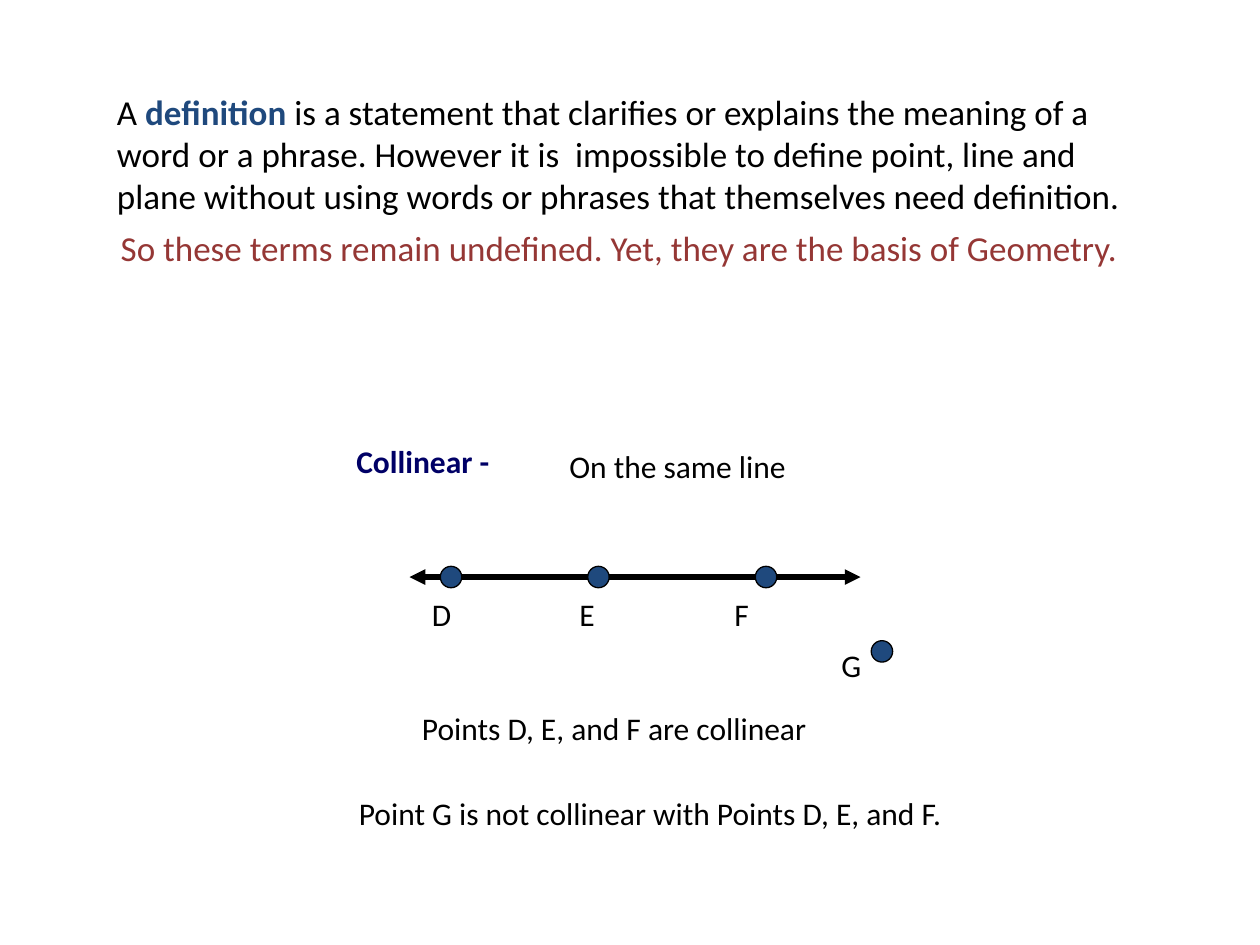
from lxml.etree import SubElement
from pptx import Presentation
from pptx.dml.color import RGBColor
from pptx.enum.shapes import MSO_CONNECTOR as CONN, MSO_SHAPE as SHAPE
from pptx.enum.text import PP_ALIGN as ALIGN
from pptx.oxml.ns import qn
from pptx.util import Inches, Pt

BLACK, BLUE, NAVY, RED = "000000", "1F497D", "000066", "953735"
FONT = "Calibri"

# (left, top, width, height), size, alignment, runs of (text, colour, bold)
TEXTS = [
    ((0.83, 0.67, 8.48, 1.11), 20, ALIGN.LEFT, [
        ("A ", BLACK, False),
        ("definition ", BLUE, True),
        ("is a statement that clarifies or explains the meaning of a word or "
         "a phrase. However it is  impossible to define point, line and plane "
         "without using words or phrases that themselves need definition.",
         BLACK, False)]),
    ((0.75, 1.75, 8.33, 0.77), 20, ALIGN.CENTER, [
        ("So these terms remain undefined. Yet, they are the basis of Geometry.",
         RED, False)]),
    ((2.73, 3.46, 1.3, 0.4), 18, ALIGN.LEFT, [("Collinear -", NAVY, True)]),
    ((4.42, 3.5, 2.72, 0.5), 18, ALIGN.LEFT, [("On the same line", BLACK, False)]),
    ((3.25, 5.58, 3.35, 0.4), 18, ALIGN.LEFT,
     [("Points D, E, and F are collinear", BLACK, False)]),
    ((6.58, 5.08, 0.4, 0.42), 18, ALIGN.LEFT, [("G", BLACK, False)]),
    ((2.75, 6.25, 5, 0.4), 18, ALIGN.LEFT,
     [("Point G is not collinear with Points D, E, and F.", BLACK, False)]),
]
LINE_LABELS = ((3.33, 4.67, 3.05, 0.5), 18, ALIGN.LEFT, [("D\tE\tF", BLACK, False)])
LABEL_TABS = [1.17, 2.4]

LINE_LEFT, LINE_RIGHT, LINE_Y = 3.25, 6.83, 4.58
DOT = 0.17
POINTS = [(3.58, LINE_Y), (4.75, LINE_Y), (6.08, LINE_Y), (7, 5.17)]  # D, E, F, G


def rgb(value):
    return RGBColor.from_string(value)


def add_text(slide, box, size, align, runs):
    tf = slide.shapes.add_textbox(*map(Inches, box)).text_frame
    tf.word_wrap = True
    p = tf.paragraphs[0]
    p.alignment = align
    for text, color, bold in runs:
        r = p.add_run()
        r.text = text
        for name, value in {"name": FONT, "size": Pt(size), "bold": bold}.items():
            setattr(r.font, name, value)
        r.font.color.rgb = rgb(color)
    return p


def add_tab_stops(p, stops):
    tabs = SubElement(p._p.get_or_add_pPr(), qn("a:tabLst"))
    for stop in stops:
        SubElement(tabs, qn("a:tab"), pos=str(Inches(stop)), algn="l")


def add_double_arrow(slide, left, right, y):
    line = slide.shapes.add_connector(
        CONN.STRAIGHT, Inches(left), Inches(y), Inches(right), Inches(y))
    line.line.color.rgb = rgb(BLACK)
    line.line.width = Pt(3)
    ln = line.line._get_or_add_ln()
    for end in ("a:headEnd", "a:tailEnd"):
        SubElement(ln, qn(end), type="triangle")
    SubElement(line._element.spPr, qn("a:effectLst"))


def add_dot(slide, x, y):
    """Draw a point centred on x, y."""
    sp = slide.shapes.add_shape(
        SHAPE.OVAL, Inches(x - DOT / 2), Inches(y - DOT / 2), Inches(DOT), Inches(DOT))
    sp.shadow.inherit = False
    sp.fill.solid()
    sp.fill.fore_color.rgb = rgb(BLUE)
    sp.line.color.rgb = rgb(BLACK)
    sp.line.width = Pt(0.75)


def main():
    prs = Presentation()
    prs.slide_width, prs.slide_height = Inches(10), Inches(7.5)
    slide = prs.slides.add_slide(prs.slide_layouts[6])
    for text in TEXTS:
        add_text(slide, *text)
    add_tab_stops(add_text(slide, *LINE_LABELS), LABEL_TABS)
    add_double_arrow(slide, LINE_LEFT, LINE_RIGHT, LINE_Y)
    for x, y in POINTS:
        add_dot(slide, x, y)
    prs.save("out.pptx")


if __name__ == "__main__":
    main()
